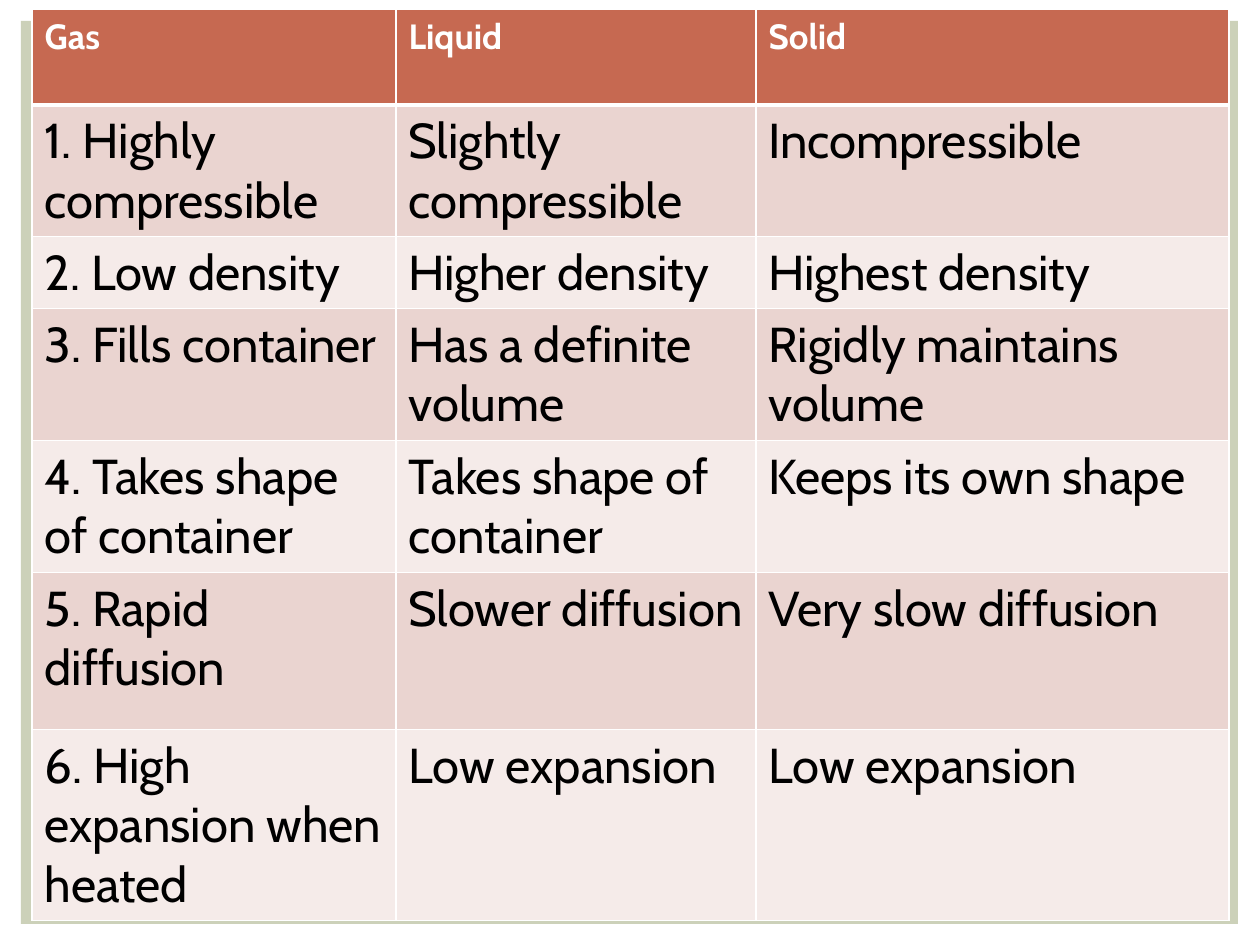
import pptx
import pptx.util
import pptx.dml.color
import pptx.enum.shapes
import pptx.oxml
from lxml import etree

ROWS = [
    ["Gas", "Liquid", "Solid"],
    ["1. Highly compressible", "Slightly compressible", "Incompressible"],
    ["2. Low density", "Higher density", "Highest density"],
    ["3. Fills container", "Has a definite volume", "Rigidly maintains volume"],
    ["4. Takes shape of container", "Takes shape of container", "Keeps its own shape"],
    ["5. Rapid diffusion", "Slower diffusion", "Very slow diffusion"],
    ["6. High expansion when heated", "Low expansion", "Low expansion"],
]
WIDTHS = [364, 360, 473]
HEIGHTS = [96, 131, 72, 132, 132, 157, 191]
HEAD, BANDS = "C66951", ["F5EBE9", "EAD4D0"]
NS = "http://schemas.openxmlformats.org/drawingml/2006/main"


def px(n):
    return pptx.util.Emu(n * 914400 // 126)


def color(code):
    return pptx.dml.color.RGBColor.from_string(code)


def add_panel(slide, x, y, w, h):
    panel = slide.shapes.add_shape(
        pptx.enum.shapes.MSO_SHAPE.RECTANGLE, px(x), px(y), px(w), px(h))
    panel.shadow.inherit = False
    panel.fill.solid()
    panel.fill.fore_color.rgb = color("CCD1B9")
    panel.line.fill.background()


def set_edges(cell, top, bottom):
    props = cell._tc.get_or_add_tcPr()
    for i, (side, width) in enumerate(
            [("L", 1), ("R", 1), ("T", top), ("B", bottom)]):
        line = etree.fromstring(
            f'<a:ln{side} xmlns:a="{NS}" w="{pptx.util.Pt(width)}"><a:solidFill>'
            f'<a:srgbClr val="FFFFFF"/></a:solidFill></a:ln{side}>')
        props.insert(i, line)


def fill_cell(cell, text, row):
    head = row == 0
    cell.text = text
    cell.fill.solid()
    cell.fill.fore_color.rgb = color(HEAD if head else BANDS[row % 2])
    font = cell.text_frame.paragraphs[0].font
    font.name = "Cabin"
    font.size = pptx.util.Pt(20 if head else 28)
    font.bold = head
    font.color.rgb = color("FFFFFF" if head else "000000")
    # A thick rule parts the header from the body
    set_edges(cell, 3 if row == 1 else 1, 3 if head else 1)


def add_grid(slide, x, y):
    table = slide.shapes.add_table(
        len(ROWS), len(WIDTHS), px(x), px(y),
        px(sum(WIDTHS)), px(sum(HEIGHTS))).table
    for col, width in zip(table.columns, WIDTHS):
        col.width = px(width)
    for r, texts in enumerate(ROWS):
        table.rows[r].height = px(HEIGHTS[r])
        for c, text in enumerate(texts):
            fill_cell(table.cell(r, c), text, r)


def main():
    deck = pptx.Presentation()
    deck.slide_width, deck.slide_height = px(1260), px(945)
    slide = deck.slides.add_slide(deck.slide_layouts[6])
    # Backing panel, then the table of states
    add_panel(slide, 21, 21, 1217, 903)
    add_grid(slide, 32, 9)
    deck.save("out.pptx")


if __name__ == "__main__":
    main()
